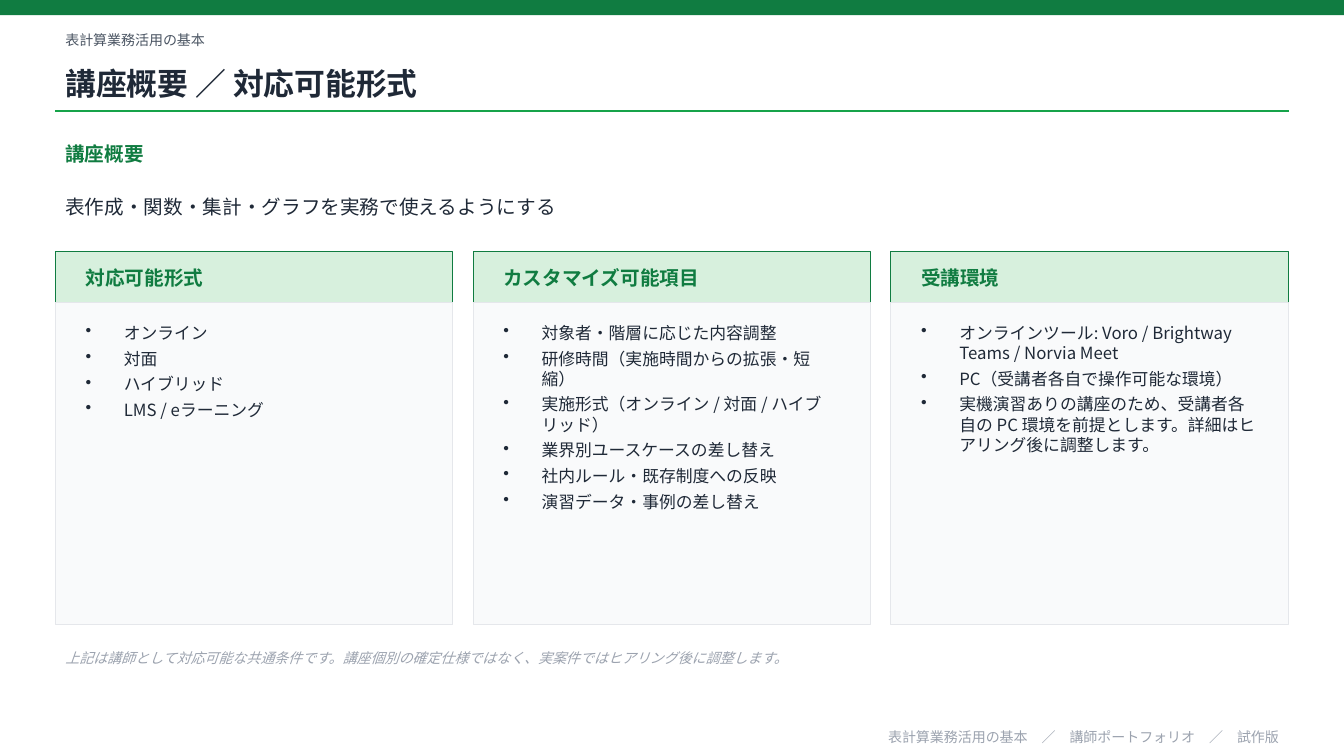
from lxml import etree
from pptx import Presentation, util as u
from pptx.dml.color import RGBColor
from pptx.enum import shapes, text
from pptx.oxml import ns

CELL = 0.05  # inches per grid column and row
WIDE, HIGH = 266.6, 150
EDGE, SPAN = 11, 244.6
GAP, PAD = 4, 4
CARD = (SPAN - 2 * GAP) / 3

GREEN, LINE, MINT = "107C41", "16A34A", "D7F0DD"
INK, SLATE, MUTED = "1F2937", "4B5563", "9CA3AF"
PALE, RULE = "F9FAFB", "E5E7EB"

COURSE = "表計算業務活用の基本"
CARDS = [
    ("対応可能形式", ["オンライン", "対面", "ハイブリッド", "LMS / eラーニング"]),
    ("カスタマイズ可能項目", [
        "対象者・階層に応じた内容調整",
        "研修時間（実施時間からの拡張・短縮）",
        "実施形式（オンライン / 対面 / ハイブリッド）",
        "業界別ユースケースの差し替え",
        "社内ルール・既存制度への反映",
        "演習データ・事例の差し替え",
    ]),
    ("受講環境", [
        "オンラインツール: Voro / Brightway Teams / Norvia Meet",
        "PC（受講者各自で操作可能な環境）",
        "実機演習ありの講座のため、受講者各自の PC 環境を前提とします。"
        "詳細はヒアリング後に調整します。",
    ]),
]


def cells(*nums):
    return [u.Inches(n * CELL) for n in nums]


def tint(code):
    return RGBColor.from_string(code)


class Deck:
    face = "Noto Sans CJK JP"

    def __init__(self):
        self.prs = Presentation()
        self.prs.slide_width, self.prs.slide_height = cells(WIDE, HIGH)
        self.slide = self.prs.slides.add_slide(self.prs.slide_layouts[6])

    def rect(self, x, y, w, h, fill, line=None):
        box = self.slide.shapes.add_shape(
            shapes.MSO_SHAPE.RECTANGLE, *cells(x, y, w, h))
        box.shadow.inherit = False
        box.fill.solid()
        box.fill.fore_color.rgb = tint(fill)
        if line:
            box.line.color.rgb = tint(line)
            box.line.width = u.Pt(0.75)
        else:
            box.line.fill.background()

    def rule(self, x, y, w, color):
        line = self.slide.shapes.add_connector(
            shapes.MSO_CONNECTOR.STRAIGHT, *cells(x, y, x + w, y))
        line.line.color.rgb = tint(color)
        line.line.width = u.Pt(1)
        etree.SubElement(line._element.spPr, ns.qn("a:effectLst"))

    def style(self, para, size, color, bold=False, italic=False):
        for run in para.runs:
            font = run.font
            font.name, font.size = self.face, u.Pt(size)
            font.bold, font.italic = bold, italic
            font.color.rgb = tint(color)
            east = etree.SubElement(run._r.rPr, ns.qn("a:ea"))
            east.set("typeface", self.face)

    def frame(self, x, y, w, h, words, anchor):
        box = self.slide.shapes.add_textbox(*cells(x, y, w, h))
        frame = box.text_frame
        frame.word_wrap = True
        frame.vertical_anchor = anchor
        frame.text = words
        return frame

    def label(self, x, y, w, h, words, size, color, right=False, **look):
        frame = self.frame(x, y, w, h, words, text.MSO_ANCHOR.MIDDLE)
        para = frame.paragraphs[0]
        if right:
            para.alignment = text.PP_ALIGN.RIGHT
        self.style(para, size, color, **look)

    def bullets(self, x, y, w, h, items, size, color):
        frame = self.frame(x, y, w, h, "\n".join(items), text.MSO_ANCHOR.TOP)
        for para in frame.paragraphs:
            props = para._p.get_or_add_pPr()
            dent = u.Inches(0.38)
            props.set("marL", str(dent))
            props.set("indent", str(-dent))
            etree.SubElement(props, ns.qn("a:buChar")).set("char", "•")
            para.space_after = u.Pt(4)
            self.style(para, size, color)

    def card(self, x, head, items):
        inner = CARD - 2 * PAD
        self.rect(x, 50, CARD, 10, MINT, GREEN)
        self.label(x + PAD, 50, inner, 10, head, 14, GREEN, bold=True)
        self.rect(x, 60, CARD, 64, PALE, RULE)
        self.bullets(x + PAD, 63, inner, 57, items, 12, INK)


def main():
    deck = Deck()
    deck.rect(0, 0, WIDE, 3, GREEN)
    deck.label(EDGE, 5, SPAN, 6, COURSE, 10, SLATE)
    deck.label(EDGE, 11, SPAN, 11, "講座概要 ／ 対応可能形式", 22, INK, bold=True)
    deck.rule(EDGE, 22, SPAN, LINE)
    deck.label(EDGE, 27, SPAN, 7, "講座概要", 14, GREEN, bold=True)
    deck.label(EDGE, 35, SPAN, 12,
               "表作成・関数・集計・グラフを実務で使えるようにする", 14, INK)
    for i, (head, items) in enumerate(CARDS):
        deck.card(EDGE + i * (CARD + GAP), head, items)
    deck.label(EDGE, 127, SPAN, 7,
               "上記は講師として対応可能な共通条件です。講座個別の確定仕様ではなく、"
               "実案件ではヒアリング後に調整します。", 10, MUTED, italic=True)
    deck.label(EDGE, 144, SPAN, 4.4,
               f"{COURSE}　／　講師ポートフォリオ　／　試作版",
               10, MUTED, right=True)
    deck.prs.save("out.pptx")


if __name__ == "__main__":
    main()
